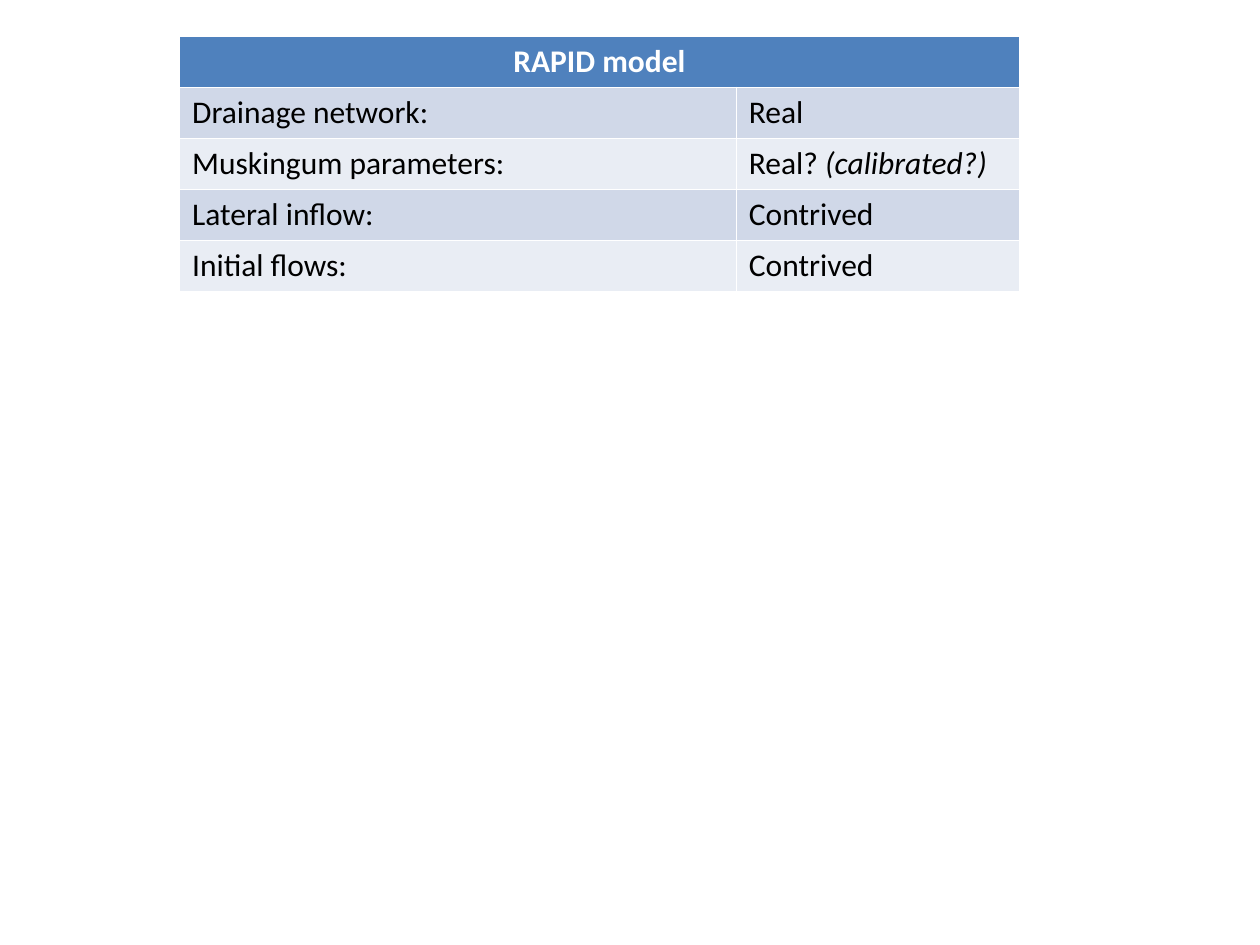
from pptx import Presentation
from pptx.dml.color import RGBColor
from pptx.enum.text import PP_ALIGN
from pptx.util import Cm, Pt

CENTER = PP_ALIGN.CENTER
LEFT = PP_ALIGN.LEFT
BLANK_LAYOUT = 6

COLORS = {
    "header": "4F81BD",
    "odd_row": "D0D8E8",
    "even_row": "E9EDF4",
    "header_text": "FFFFFF",
    "body_text": "000000",
}
HEADING = "RAPID model"
# Each row: label, value, remark in italics
INPUTS = [
    ("Drainage network:", "Real", ""),
    ("Muskingum parameters:", "Real? ", "(calibrated?)"),
    ("Lateral inflow:", "Contrived", ""),
    ("Initial flows:", "Contrived", ""),
]
COLUMN_SHARES = (0.663, 0.337)


def add_run(paragraph, text, color, **font_format):
    run = paragraph.add_run()
    run.text = text
    run.font.color.rgb = RGBColor.from_string(COLORS[color])
    for name, value in {"name": "Calibri", "size": Pt(18), **font_format}.items():
        setattr(run.font, name, value)


def fill_cell(cell, fill, text, color, alignment=LEFT, remark="", bold=False):
    cell.fill.solid()
    cell.fill.fore_color.rgb = RGBColor.from_string(COLORS[fill])
    paragraph = cell.text_frame.paragraphs[0]
    paragraph.alignment = alignment
    add_run(paragraph, text, color, bold=bold)
    if remark:
        add_run(paragraph, remark, color, bold=bold, italic=True)


def add_model_table(slide, left, top, width, height):
    """Place the table of model inputs; the default table style draws the white rules."""
    table = slide.shapes.add_table(
        len(INPUTS) + 1, len(COLUMN_SHARES), left, top, width, height
    ).table
    for column, share in zip(table.columns, COLUMN_SHARES):
        column.width = int(width * share)

    heading = table.cell(0, 0)
    heading.merge(table.cell(0, 1))
    fill_cell(heading, "header", HEADING, "header_text", CENTER, bold=True)

    for row, (label, value, remark) in enumerate(INPUTS, start=1):
        fill = "odd_row" if row % 2 else "even_row"
        fill_cell(table.cell(row, 0), fill, label, "body_text")
        fill_cell(table.cell(row, 1), fill, value, "body_text", remark=remark)


def main():
    presentation = Presentation()
    presentation.slide_width = Cm(25.4)
    presentation.slide_height = Cm(19.05)
    slide = presentation.slides.add_slide(presentation.slide_layouts[BLANK_LAYOUT])
    add_model_table(slide, Cm(3.62), Cm(0.73), Cm(16.93), Cm(5.15))
    presentation.save("out.pptx")


if __name__ == "__main__":
    main()
